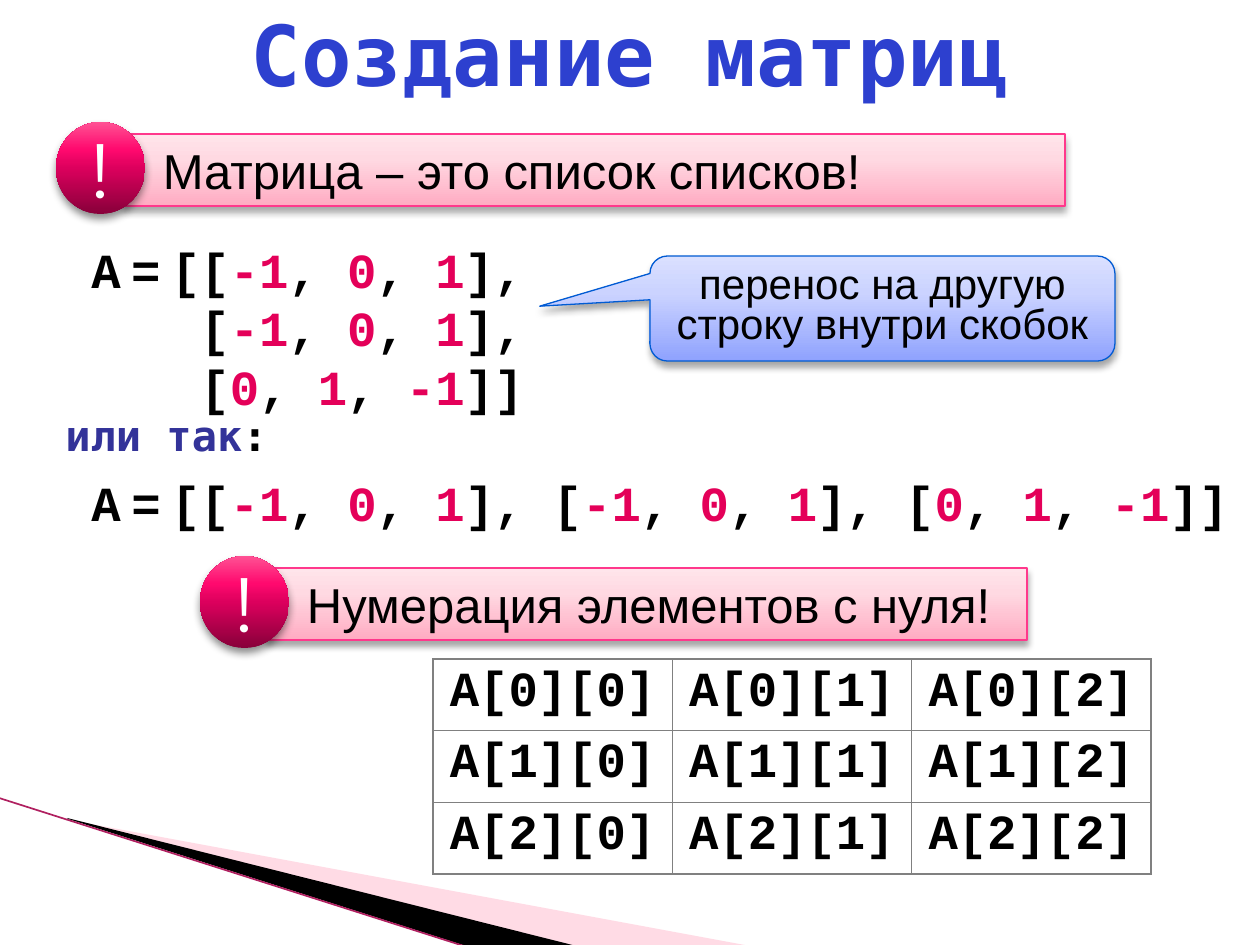
from dataclasses import dataclass
from itertools import groupby

from lxml.etree import SubElement
from pptx import Presentation
from pptx.dml.color import RGBColor
from pptx.enum.shapes import MSO_CONNECTOR as CONN, MSO_SHAPE as SHAPE
from pptx.enum.text import MSO_ANCHOR as ANCHOR, PP_ALIGN as ALIGN
from pptx.oxml.ns import qn
from pptx.util import Emu, Pt

SCALE = 914400 / 126


@dataclass(frozen=True)
class Theme:
    black: str = "000000"
    white: str = "FFFFFF"
    title: str = "2D40CF"
    note: str = "333399"
    number: str = "E40059"
    pale: str = "FFA5BF"
    edge: str = "B02060"
    grid: str = "808080"
    banner_line: str = "FF388C"
    callout_line: str = "005BD3"
    banner: tuple = ((0, "FFABC2"), (65, "FFD9E2"), (100, "FFE5EB"))
    badge: tuple = ((0, "88003A"), (50, "DC005D"), (70, "FF096E"), (100, "FF5294"))
    callout: tuple = ((0, "8FA2FE"), (65, "CBD3FF"), (100, "DAE0FF"))
    sans: str = "Arial"
    code: str = "Courier New"
    mono: str = "DejaVu Sans Mono"
    mark: str = "Montserrat"
    title_size: int = 48
    mark_size: int = 44
    body_size: int = 28
    note_size: int = 24
    gap_size: int = 10


T = Theme()


def px(*values):
    return [Emu(round(v * SCALE)) for v in values]


def apply(obj, **values):
    for name, value in values.items():
        setattr(obj, name, value)


def add_run(p, text, font, size, color, bold=False):
    r = p.add_run()
    r.text = text
    apply(r.font, name=font, size=Pt(size), bold=bold)
    r.font.color.rgb = RGBColor.from_string(color)


def add_color(parent, color, alpha=None):
    clr = SubElement(parent, qn("a:srgbClr"), val=color)
    if alpha:
        SubElement(clr, qn("a:alpha"), val=str(alpha * 1000))


def set_gradient(sp, stops):
    sp.fill.gradient()
    sp.fill.gradient_angle = 90
    gs_lst = sp._element.spPr.find(qn("a:gradFill")).find(qn("a:gsLst"))
    for gs in list(gs_lst):
        gs_lst.remove(gs)
    for pos, color in stops:
        add_color(SubElement(gs_lst, qn("a:gs"), pos=str(pos * 1000)), color)


def set_line(line, color, width=0.75):
    line.color.rgb = RGBColor.from_string(color)
    line.width = Pt(width)


def set_shadow(sp, alpha, blur, dist=3):
    sp.shadow.inherit = False
    effects = sp._element.spPr.find(qn("a:effectLst"))
    shadow = SubElement(effects, qn("a:outerShdw"), blurRad=str(Pt(blur)),
                        dist=str(Pt(dist)), dir="5400000", rotWithShape="0")
    add_color(shadow, T.black, alpha)


def add_glossy(shapes, kind, box, stops, line=None, alpha=35, blur=4):
    sp = shapes.add_shape(kind, *px(*box))
    set_gradient(sp, stops)
    if line:
        set_line(sp.line, line)
    else:
        sp.line.fill.background()
    set_shadow(sp, alpha, blur)
    sp.text_frame.word_wrap = True
    return sp


def add_banner(slide, box, badge_left, text):
    shapes = slide.shapes.add_group_shape().shapes
    tf = add_glossy(shapes, SHAPE.RECTANGLE, box, T.banner, T.banner_line).text_frame
    apply(tf, vertical_anchor=ANCHOR.TOP, margin_left=px(40)[0])
    p = tf.paragraphs[0]
    p.alignment = ALIGN.LEFT
    add_run(p, text, T.sans, T.body_size, T.black)

    badge = (badge_left, box[1] - 12, 89, 92)
    tf = add_glossy(shapes, SHAPE.OVAL, badge, T.badge, alpha=45, blur=5).text_frame
    apply(tf, vertical_anchor=ANCHOR.MIDDLE, word_wrap=False)
    p = tf.paragraphs[0]
    p.alignment = ALIGN.CENTER
    add_run(p, "!", T.mark, T.mark_size, T.white)


def add_callout(slide, box, text):
    sp = add_glossy(slide.shapes, SHAPE.ROUNDED_RECTANGULAR_CALLOUT, box,
                    T.callout, T.callout_line)
    for i, value in enumerate((-0.737, -0.022, 0.167)):
        sp.adjustments[i] = value
    sp.text_frame.vertical_anchor = ANCHOR.TOP
    p = sp.text_frame.paragraphs[0]
    apply(p, alignment=ALIGN.CENTER, line_spacing=0.8)
    add_run(p, text, T.sans, T.note_size, T.black)


def add_text(slide, box):
    tf = slide.shapes.add_textbox(*px(*box)).text_frame
    tf.word_wrap = True
    return tf


def add_code_runs(p, code):
    for is_number, chars in groupby(code, lambda c: c in "-0123456789"):
        add_run(p, "".join(chars), T.code, T.body_size,
                T.number if is_number else T.black, True)


def add_code(slide, box, lines):
    tf = add_text(slide, box)
    for i, line in enumerate(lines):
        p = tf.add_paragraph() if i else tf.paragraphs[0]
        p.alignment = ALIGN.JUSTIFY
        margin, indent = px(25, -13)
        p_pr = p._p.get_or_add_pPr()
        p_pr.set("marL", str(margin))
        p_pr.set("indent", str(indent))
        prefix = (("  ", "   "),) if i else (("", "A"), (" ", "="), (" ", ""))
        for gap, code in prefix:
            if gap:
                add_run(p, gap, T.code, T.gap_size, T.black, True)
            add_code_runs(p, code)
        add_code_runs(p, line)


def add_index_table(slide, box, count):
    table = slide.shapes.add_table(count, count, *px(*box)).table
    apply(table, first_row=False, horz_banding=False)
    for row in range(count):
        for col in range(count):
            cell = table.cell(row, col)
            p = cell.text_frame.paragraphs[0]
            p.alignment = ALIGN.CENTER
            add_run(p, f"A[{row}][{col}]", T.code, T.body_size, T.black, True)
            tc_pr = cell._tc.get_or_add_tcPr()
            for side in ("lnL", "lnR", "lnT", "lnB"):
                ln = SubElement(tc_pr, qn(f"a:{side}"), w=str(Pt(1)))
                add_color(SubElement(ln, qn("a:solidFill")), T.grid)
            cell.fill.background()


def add_wedge(slide, points, color, alpha=None):
    builder = slide.shapes.build_freeform(*points[0], scale=SCALE)
    builder.add_line_segments(points[1:], close=True)
    sp = builder.convert_to_shape()
    sp.fill.solid()
    sp.fill.fore_color.rgb = RGBColor.from_string(color)
    sp.line.fill.background()
    sp.shadow.inherit = False
    if alpha:
        clr = sp._element.spPr.find(qn("a:solidFill"))[0]
        SubElement(clr, qn("a:alpha"), val=str(alpha * 1000))


def add_corner(slide):
    add_wedge(slide, [(69, 820), (750, 946), (575, 946), (69, 819)], T.pale, 40)
    add_wedge(slide, [(67, 818), (576, 946), (469, 947), (68, 819)], T.black)
    line = slide.shapes.add_connector(CONN.STRAIGHT, *px(-1, 798, 467, 947))
    set_line(line.line, T.edge, 0.95)
    SubElement(line._element.spPr, qn("a:effectLst"))


def set_title(slide, text):
    sp = slide.shapes.title
    left, top, width, height = px(0, 0, 1260, 106)
    apply(sp, left=left, top=top, width=width, height=height)
    sp.text_frame.vertical_anchor = ANCHOR.MIDDLE
    p = sp.text_frame.paragraphs[0]
    p.alignment = ALIGN.CENTER
    add_run(p, text, T.mono, T.title_size, T.title, True)


def main():
    prs = Presentation()
    prs.slide_width, prs.slide_height = px(1260, 945)
    slide = prs.slides.add_slide(prs.slide_layouts[5])
    add_corner(slide)
    set_title(slide, "Создание матриц")
    rows = ["[-1, 0, 1]", "[-1, 0, 1]", "[0, 1, -1]"]
    add_code(slide, (67, 233, 630, 190), [f"[{rows[0]},", f"{rows[1]},", f"{rows[2]}]"])
    add_banner(slide, (123, 134, 942, 72), 56, "Матрица – это список списков!")
    add_callout(slide, (650, 256, 465, 105), "перенос на другую строку внутри скобок")
    add_code(slide, (67, 466, 1193, 72), [f"[{', '.join(rows)}]"])
    p = add_text(slide, (53, 403, 689, 64)).paragraphs[0]
    add_run(p, "или так", T.mono, T.note_size, T.note, True)
    add_run(p, ":", T.mono, T.note_size, T.black, True)
    add_banner(slide, (267, 568, 760, 72), 200, "Нумерация элементов с нуля!")
    add_index_table(slide, (433, 659, 718, 215), 3)
    prs.save("out.pptx")


if __name__ == "__main__":
    main()
